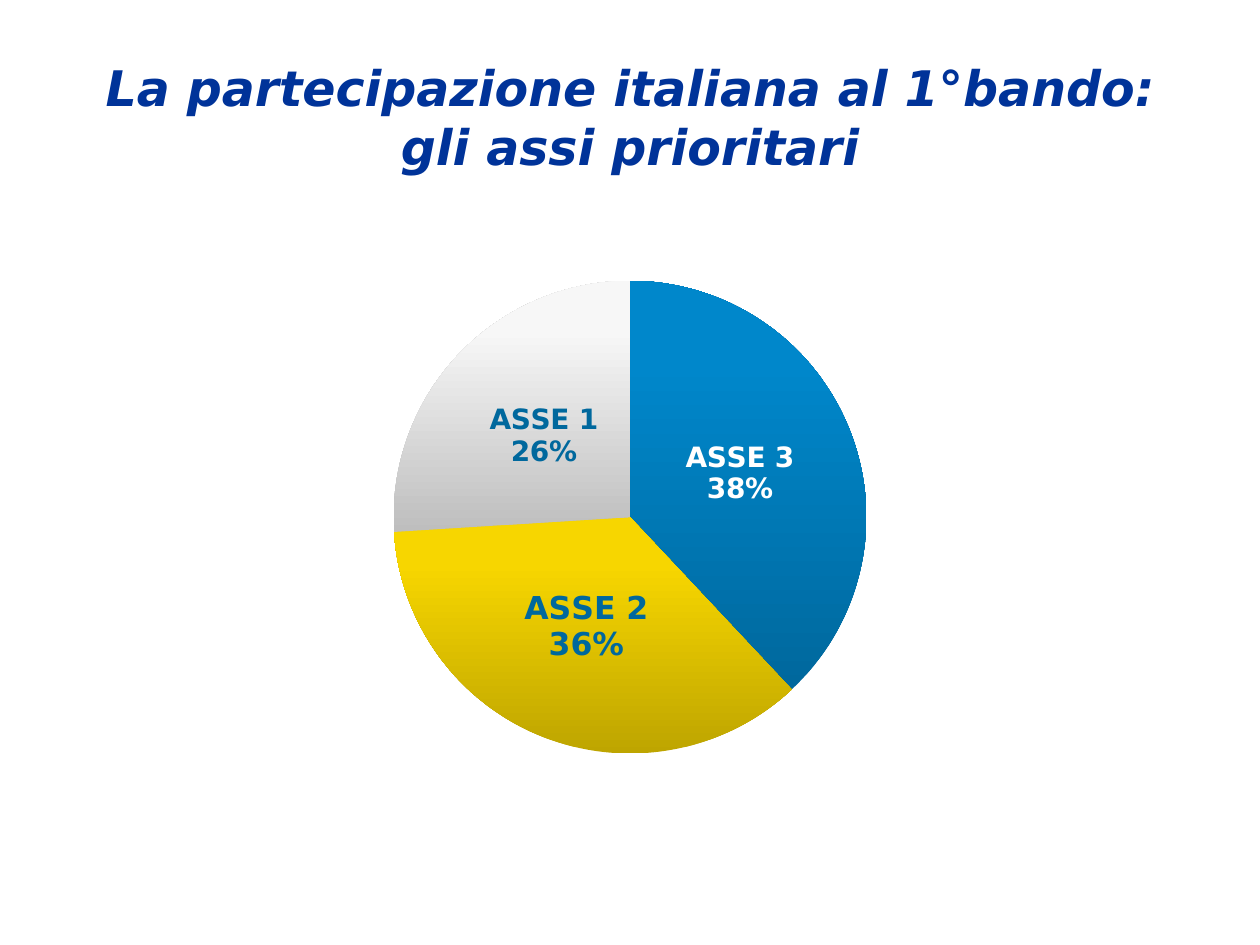
"""Build a slide with a pie chart of the Italian share of each priority axis."""
import copy

import lxml.etree
import pptx
import pptx.chart.data
import pptx.dml.color
import pptx.enum.chart
import pptx.enum.text
import pptx.oxml.ns
import pptx.util

RGBColor = pptx.dml.color.RGBColor
NAVY = RGBColor(0x00, 0x33, 0x99)
WHITE = RGBColor(0xFF, 0xFF, 0xFF)
TEAL = RGBColor(0x00, 0x68, 0x9D)
SKY = RGBColor(0x00, 0x8B, 0xD2)
GRAY = RGBColor(0x80, 0x80, 0x80)
BLUES = (TEAL, RGBColor(0x00, 0x87, 0xCB), RGBColor(0x00, 0x87, 0xCC))
YELLOWS = (RGBColor(0xBE, 0xA5, 0x00), RGBColor(0xF7, 0xD6, 0x00), RGBColor(0xF8, 0xD7, 0x00))
GRAYS = (RGBColor(0xBE, 0xBE, 0xBE), RGBColor(0xF7, 0xF7, 0xF7), RGBColor(0xF8, 0xF8, 0xF8))
STOPS = (0, 0.8, 1)
SLICES = [
    ("ASSE 3", 38, BLUES, WHITE, 16),
    ("ASSE 2", 36, YELLOWS, TEAL, 18),
    ("ASSE 1", 26, GRAYS, TEAL, 16),
]


class Deck:
    """Hold the style and the current slide."""

    font = "DejaVu Sans"

    def __init__(self):
        self.prs = pptx.Presentation()
        self.prs.slide_width = pptx.util.Inches(10)
        self.prs.slide_height = pptx.util.Inches(7.5)
        self.s = self.prs.slides.add_slide(self.prs.slide_layouts[5])

    def box(self, x, y, w, h):
        """Turn shares of the slide into lengths."""
        W, H = self.prs.slide_width, self.prs.slide_height
        return int(x * W), int(y * H), int(w * W), int(h * H)

    def style(self, font, size, color, **extra):
        """Apply the deck font with the given format values."""
        font.color.rgb = color
        for name, value in {"name": self.font, "size": pptx.util.Pt(size), **extra}.items():
            setattr(font, name, value)

    def title(self, text, share):
        """Fill and place the title placeholder."""
        sp = self.s.shapes.title
        sp.left, sp.top, sp.width, sp.height = self.box(*share)
        tf = sp.text_frame
        tf.text = text
        tf.auto_size = pptx.enum.text.MSO_AUTO_SIZE.NONE
        tf.vertical_anchor = pptx.enum.text.MSO_ANCHOR.MIDDLE
        p = tf.paragraphs[0]
        p.alignment = pptx.enum.text.PP_ALIGN.CENTER
        self.style(p.runs[0].font, 28, NAVY, bold=True, italic=True)

    def gradient(self, point, colors):
        """Fill a slice with an upward gradient."""
        fill = point.format.fill
        fill.gradient()
        fill.gradient_angle = 90
        gs = fill.gradient_stops[1]._gs
        gs.addnext(copy.deepcopy(gs))
        for stop, color, position in zip(fill.gradient_stops, colors, STOPS):
            stop.color.rgb = color
            stop.position = position

    def show_share(self, label):
        """Show category and percentage on two lines."""
        qn = pptx.oxml.ns.qn
        for tag, value in {"showVal": "0", "showCatName": "1", "showPercent": "1"}.items():
            label.find(qn(f"c:{tag}")).set("val", value)
        separator = lxml.etree.Element(qn("c:separator"))
        separator.text = "\n"
        label.find(qn("c:showBubbleSize")).addnext(separator)

    def layout(self, chart, **shares):
        """Fix the inner plot area by shares of the chart."""
        qn = pptx.oxml.ns.qn
        area = chart._chartSpace.find(".//" + qn("c:plotArea"))
        for old in area.findall(qn("c:layout")):
            area.remove(old)
        outer = lxml.etree.Element(qn("c:layout"))
        area.insert(0, outer)
        manual = lxml.etree.SubElement(outer, qn("c:manualLayout"))
        values = {"layoutTarget": "inner", "xMode": "edge", "yMode": "edge", **shares}
        for tag, value in values.items():
            lxml.etree.SubElement(manual, qn(f"c:{tag}")).set("val", str(value))

    def pie(self, slices, share):
        """Add a pie chart with a label inside each slice."""
        data = pptx.chart.data.CategoryChartData()
        data.categories = [row[0] for row in slices]
        data.add_series("Series 1", [row[1] for row in slices])
        kind = pptx.enum.chart.XL_CHART_TYPE.PIE
        chart = self.s.shapes.add_chart(kind, *self.box(*share), data).chart
        chart.has_legend = chart.has_title = False
        self.style(chart.font, 10, GRAY)
        self.layout(chart, x=0.22, y=0.03, w=0.56, h=0.93)
        center = pptx.enum.chart.XL_LABEL_POSITION.CENTER
        series = chart.plots[0].series[0]
        labels = series.data_labels
        self.style(labels.font, 12, SKY, bold=True)
        labels.position = center
        self.show_share(labels._element)
        for i, (_, _, colors, color, size) in enumerate(slices):
            point = series.points[i]
            self.gradient(point, colors)
            label = point.data_label
            self.style(label.font, size, color, bold=True)
            label.position = center
            self.show_share(labels._element.findall(pptx.oxml.ns.qn("c:dLbl"))[i])


def main():
    """Build and save the slide."""
    deck = Deck()
    deck.title("La partecipazione italiana al 1°bando: gli assi prioritari", (0.05, 0.04, 0.9, 1 / 6))
    deck.pie(SLICES, (0.165, 0.28, 0.67, 0.54))
    deck.prs.save("out.pptx")


if __name__ == "__main__":
    main()
